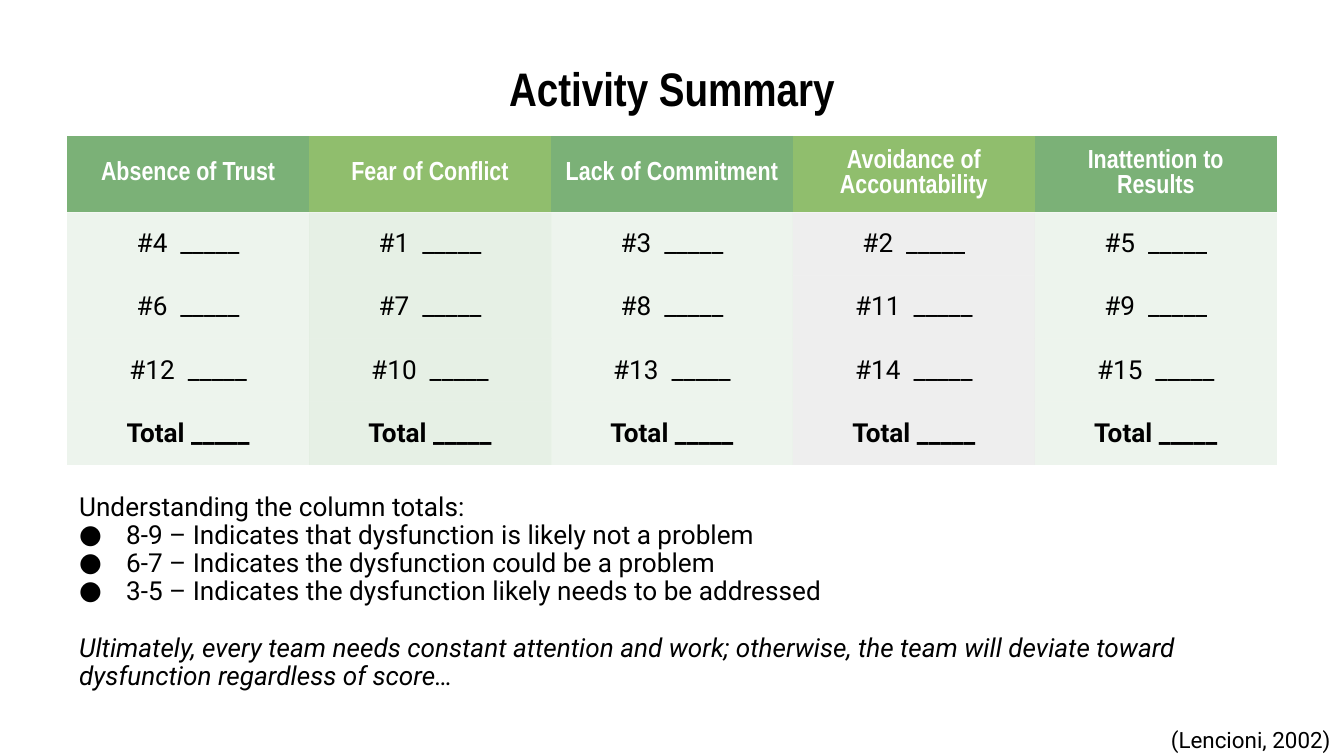
from lxml import etree
from pptx import Presentation
from pptx import util as u
from pptx.dml.color import RGBColor
from pptx.enum import text
from pptx.oxml import ns

WIDTH = 10
HEIGHT = WIDTH * 9 / 16
COLORS = {
    "black": "000000", "white": "FFFFFF", "gray": "808080",
    "green": "7BB177", "lime": "90BE6D",
}
HEADING_FONT, BODY_FONT = "Arial Narrow", "Roboto"
NO_GRID_STYLE = "{2D5ABB26-0587-4C30-8999-92F81FD0307C}"
ROW_HEIGHT = u.Inches(0.47)
BLANK = "_____"

# heading, heading fill, body fill, body opacity in percent, question numbers
COLUMNS = [
    ("Absence of Trust", "green", "green", 13, (4, 6, 12)),
    ("Fear of Conflict", "lime", "green", 19, (1, 7, 10)),
    ("Lack of Commitment", "green", "green", 13, (3, 8, 13)),
    ("Avoidance of Accountability", "lime", "gray", 13, (2, 11, 14)),
    ("Inattention to Results", "green", "green", 13, (5, 9, 15)),
]
SCORES = [
    "8-9 – Indicates that dysfunction is likely not a problem",
    "6-7 – Indicates the dysfunction could be a problem",
    "3-5 – Indicates the dysfunction likely needs to be addressed",
]
ADVICE = ("Ultimately, every team needs constant attention and work; otherwise, "
          "the team will deviate toward dysfunction regardless of score…")


def share(left, top, width, height):
    """Turn percentages of the slide's size into lengths."""
    return [u.Inches(value * size / 100) for value, size in
            zip((left, top, width, height), (WIDTH, HEIGHT, WIDTH, HEIGHT))]


def add_run(paragraph, words, size=14, font=BODY_FONT, color="black",
            bold=False, italic=False):
    run = paragraph.add_run()
    run.text = words
    run.font.size, run.font.name = u.Pt(size), font
    run.font.bold, run.font.italic = bold, italic
    run.font.color.rgb = RGBColor.from_string(COLORS[color])


def set_margins(holder):
    holder.margin_left = holder.margin_right = u.Inches(0.1)
    holder.margin_top = holder.margin_bottom = u.Inches(0.1)


def set_frame(frame, anchor):
    frame.word_wrap = True
    frame.auto_size = text.MSO_AUTO_SIZE.NONE
    frame.vertical_anchor = anchor
    set_margins(frame)


def add_text_box(slide, box, anchor):
    frame = slide.shapes.add_textbox(*box).text_frame
    set_frame(frame, anchor)
    return frame


def set_indent(paragraph, margin, first_line=0, bullet=None):
    properties = paragraph._p.get_or_add_pPr()
    properties.set("marL", str(u.Inches(margin)))
    properties.set("indent", str(u.Inches(first_line)))
    if bullet:
        color = etree.SubElement(properties, ns.qn("a:buClr"))
        etree.SubElement(color, ns.qn("a:srgbClr"), val=COLORS["black"])
        etree.SubElement(properties, ns.qn("a:buFont"), typeface=BODY_FONT)
        etree.SubElement(properties, ns.qn("a:buChar"), char=bullet)


def fill_cell(cell, color, opacity=100):
    cell.fill.solid()
    cell.fill.fore_color.rgb = RGBColor.from_string(COLORS[color])
    if opacity < 100:
        shade = cell._tc.tcPr.find(".//" + ns.qn("a:srgbClr"))
        etree.SubElement(shade, ns.qn("a:alpha"), val=str(opacity * 1000))


def write_cell(cell, words, **style):
    cell.vertical_anchor = text.MSO_ANCHOR.MIDDLE
    set_margins(cell)
    paragraph = cell.text_frame.paragraphs[0]
    paragraph.alignment = text.PP_ALIGN.CENTER
    add_run(paragraph, words, **style)


def place_title(slide, box):
    title = slide.shapes.title
    title.left, title.top, title.width, title.height = box
    set_frame(title.text_frame, text.MSO_ANCHOR.MIDDLE)
    paragraph = title.text_frame.paragraphs[0]
    paragraph.alignment = text.PP_ALIGN.CENTER
    add_run(paragraph, "Activity Summary", 25.2, HEADING_FONT, bold=True)


def add_score_table(slide, box):
    row_count = 2 + len(COLUMNS[0][-1])
    table = slide.shapes.add_table(row_count, len(COLUMNS), *box).table
    table.horz_banding = False
    table._tbl.find(".//" + ns.qn("a:tableStyleId")).text = NO_GRID_STYLE
    for row in table.rows:
        row.height = ROW_HEIGHT

    for column, (heading, head_fill, fill, opacity, numbers) in enumerate(COLUMNS):
        head = table.cell(0, column)
        write_cell(head, heading, font=HEADING_FONT, color="white", bold=True)
        fill_cell(head, head_fill)
        entries = [f"#{number}  {BLANK}" for number in numbers] + [f"Total {BLANK}"]
        for row, entry in enumerate(entries, 1):
            cell = table.cell(row, column)
            write_cell(cell, entry, bold=row == len(entries))
            fill_cell(cell, fill, opacity)


def add_explanation(slide, box):
    frame = add_text_box(slide, box, text.MSO_ANCHOR.TOP)
    intro = frame.paragraphs[0]
    set_indent(intro, 0.15)
    add_run(intro, "Understanding the column totals:")
    for score in SCORES:
        paragraph = frame.add_paragraph()
        set_indent(paragraph, 0.5, -0.35, "●")
        add_run(paragraph, score)
    advice = frame.add_paragraph()
    set_indent(advice, 0.15)
    advice.space_before = u.Pt(15)
    add_run(advice, ADVICE, italic=True)
    for paragraph in frame.paragraphs:
        paragraph.line_spacing = 0.9


def add_citation(slide, box):
    frame = add_text_box(slide, box, text.MSO_ANCHOR.MIDDLE)
    paragraph = frame.paragraphs[0]
    paragraph.alignment = text.PP_ALIGN.RIGHT
    add_run(paragraph, "(Lencioni, 2002)", 12)


def main():
    presentation = Presentation()
    presentation.slide_width = u.Inches(WIDTH)
    presentation.slide_height = u.Inches(HEIGHT)
    slide = presentation.slides.add_slide(presentation.slide_layouts[5])

    place_title(slide, share(5, 8, 90, 7.3))
    add_score_table(slide, share(5, 18, 90, 45.5))
    add_explanation(slide, share(3.4, 63.5, 93.2, 31.1))
    add_citation(slide, share(71.1, 95.7, 28.9, 4.3))

    presentation.save("out.pptx")


if __name__ == "__main__":
    main()
